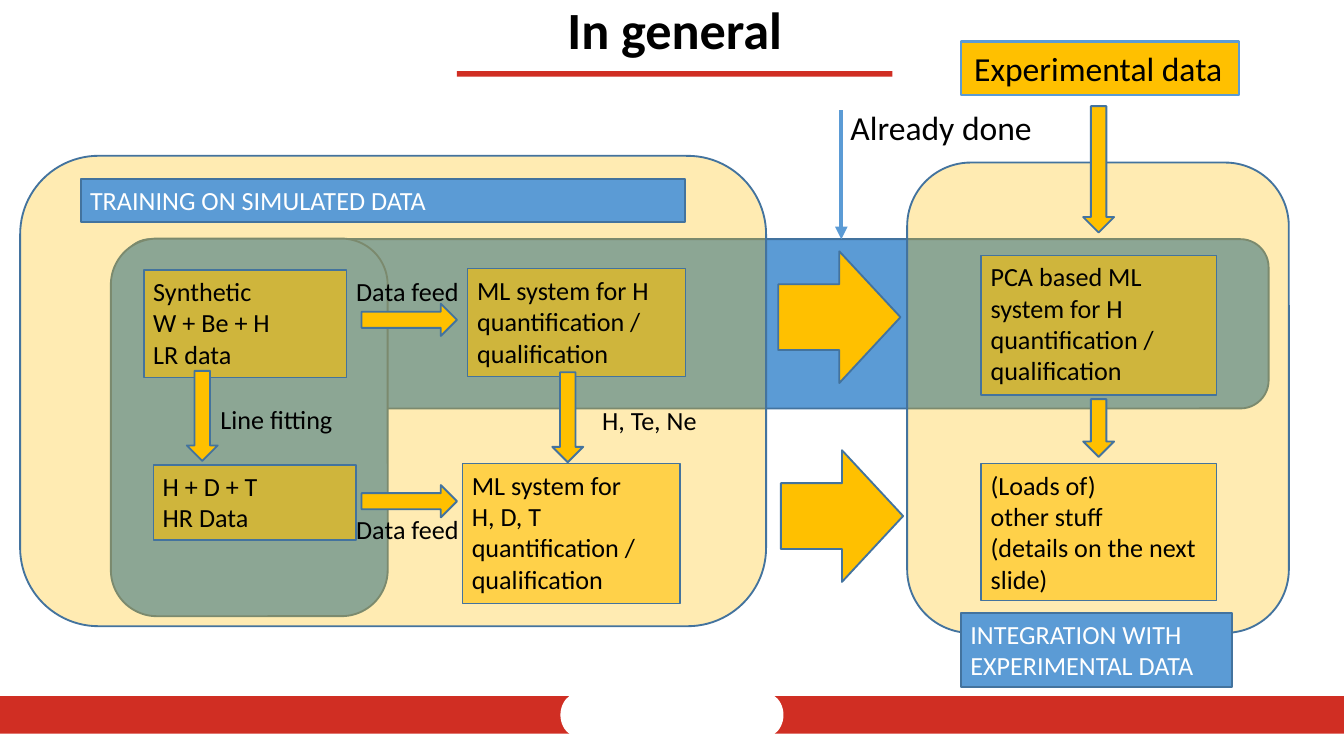
from lxml import etree
from pptx import Presentation
from pptx import util as u
from pptx.dml.color import RGBColor
from pptx.enum import shapes, text
from pptx.oxml import ns

WIDTH = u.Inches(10)
HEIGHT = u.Emu(WIDTH * 9 // 16)
CELL = WIDTH / 100
FONT = "Calibri"
COLOURS = {
    "black": "000000",
    "white": "FFFFFF",
    "red": "D02E23",
    "blue": "5B9BD5",
    "navy": "43739E",
    "gold": "FFC000",
}
KINDS = shapes.MSO_SHAPE


def cells(*counts):
    return [u.Emu(round(count * CELL)) for count in counts]


def rgb(name):
    return RGBColor.from_string(COLOURS[name])


def add_shape(slide, kind, place, fill, line="navy", weight=1, opacity=100):
    shape = slide.shapes.add_shape(kind, *cells(*place))
    shape.shadow.inherit = False
    shape.fill.solid()
    shape.fill.fore_color.rgb = rgb(fill)
    if opacity < 100:
        colour = shape._element.spPr.find(ns.qn("a:solidFill")).find(ns.qn("a:srgbClr"))
        etree.SubElement(colour, ns.qn("a:alpha"), val=str(opacity * 1000))
    if line:
        shape.line.color.rgb = rgb(line)
        shape.line.width = u.Pt(weight)
    else:
        shape.line.fill.background()
    return shape


def write(shape, paragraphs, size=14, colour="black", wrap=True, inset=(0.7, 0.4)):
    frame = shape.text_frame
    frame.word_wrap = wrap
    frame.auto_size = text.MSO_AUTO_SIZE.SHAPE_TO_FIT_TEXT
    frame.vertical_anchor = text.MSO_ANCHOR.TOP
    frame.margin_left, frame.margin_top = cells(*inset)
    frame.margin_right, frame.margin_bottom = cells(*inset)
    for index, content in enumerate(paragraphs):
        paragraph = frame.add_paragraph() if index else frame.paragraphs[0]
        paragraph.alignment = text.PP_ALIGN.LEFT
        for number, line in enumerate(content.split("\n")):
            if number:
                paragraph.add_line_break()
            run = paragraph.add_run()
            run.text = line
            run.font.name = FONT
            run.font.size = u.Pt(size)
            run.font.color.rgb = rgb(colour)


def add_label(slide, place, words, size=14, inset=(0.7, 0.4)):
    box = slide.shapes.add_textbox(*cells(*place))
    write(box, [words], size, wrap=False, inset=inset)
    return box


def add_step(slide, place, *paragraphs):
    step = add_shape(slide, KINDS.RECTANGLE, place, "gold", weight=0.75, opacity=59)
    write(step, paragraphs)


def add_heading(slide, place, words):
    heading = add_shape(slide, KINDS.RECTANGLE, place, "blue")
    write(heading, [words], colour="white")


def add_panel(slide, place):
    add_shape(slide, KINDS.ROUNDED_RECTANGLE, place, "gold", opacity=30)


def add_down_arrow(slide, left, top, height):
    add_shape(slide, KINDS.DOWN_ARROW, (left, top, 2.3, height), "gold")


def add_right_arrow(slide, left, top, width, height):
    add_shape(slide, KINDS.RIGHT_ARROW, (left, top, width, height), "gold")


def add_pointer(slide, column, top, bottom):
    pointer = slide.shapes.add_connector(
        shapes.MSO_CONNECTOR.STRAIGHT, *cells(column, top, column, bottom))
    pointer.line.color.rgb = rgb("blue")
    pointer.line.width = u.Pt(2.25)
    properties = pointer._element.spPr
    etree.SubElement(properties.get_or_add_ln(), ns.qn("a:tailEnd"), type="triangle")
    etree.SubElement(properties, ns.qn("a:effectLst"))


def add_frame(slide):
    add_shape(slide, KINDS.RECTANGLE, (34, 5.3, 32.4, 0.4), "red", None)
    for bar_left, notch_left in ((57.6, 55.3), (0, 41.7)):
        add_shape(slide, KINDS.RECTANGLE, (bar_left, 51.8, 42.4, 2.8), "red", None)
        add_shape(slide, KINDS.OVAL, (notch_left, 51.5, 3, 3.4), "white", None)


def add_title(slide, words):
    title = add_label(slide, (16.8, 0.8, 66.8, 3.3), words, 28)
    frame = title.text_frame
    frame.word_wrap = True
    frame.auto_size = text.MSO_AUTO_SIZE.NONE
    frame.vertical_anchor = text.MSO_ANCHOR.MIDDLE
    paragraph = frame.paragraphs[0]
    paragraph.alignment = text.PP_ALIGN.CENTER
    paragraph.line_spacing = 0.9
    paragraph.runs[0].font.bold = True


def add_training(slide):
    add_panel(slide, (1.5, 11.6, 55.5, 35))
    add_step(slide, (10.7, 20.1, 15.1, 8), "Synthetic\nW + Be + H\nLR data")
    add_step(slide, (34.8, 20, 16.2, 8), "ML system for H quantification / qualification")
    add_step(slide, (11.4, 34.6, 15.1, 5.6), "H + D + T\nHR Data")
    add_step(slide, (34.4, 34.5, 16.2, 10.4),
             "ML system for\nH, D, T quantification / qualification")
    add_label(slide, (44.1, 29.7, 9.8, 3.2), "H, Te, Ne")
    add_label(slide, (15.7, 29.6, 10.7, 3.2), "Line fitting")
    for left, top in ((13.9, 27.6), (41.1, 27.7)):
        add_down_arrow(slide, left, top, 6.7)
    for arrow_top, label_top in ((22.6, 20.1), (36.1, 37.8)):
        add_right_arrow(slide, 26.9, arrow_top, 7.1, 2.4)
        add_label(slide, (25.8, label_top, 10.2, 3.2), "Data feed")
    add_heading(slide, (6, 13.3, 45, 3.2), "TRAINING ON SIMULATED DATA")


def add_integration(slide):
    add_panel(slide, (67.5, 12.1, 28.4, 35))
    add_heading(slide, (71.5, 45.6, 20.2, 5.5), "INTEGRATION WITH EXPERIMENTAL DATA")
    add_step(slide, (73, 19, 17.5, 10.4),
             "PCA based ML system for H quantification / qualification")
    add_step(slide, (73, 34.5, 17.5, 10.2),
             "(Loads of)\nother stuff", "(details on the next slide)")
    source = add_shape(slide, KINDS.RECTANGLE, (71.5, 3.1, 20.7, 4), "gold", "blue", 1.25)
    write(source, ["Experimental data"], 18, wrap=False, inset=(1, 0.5))
    for top, height in ((7.9, 9.4), (29.7, 4.3)):
        add_down_arrow(slide, 80.6, top, height)


def main():
    presentation = Presentation()
    presentation.slide_width, presentation.slide_height = WIDTH, HEIGHT
    slide = presentation.slides.add_slide(presentation.slide_layouts[6])
    add_frame(slide)
    add_title(slide, "In general")
    for place in ((9.1, 17.8, 85.3, 12.6), (8.25, 17.75, 20.6, 28.1)):
        add_shape(slide, KINDS.ROUNDED_RECTANGLE, place, "blue")
    add_training(slide)
    add_integration(slide)
    for left, top in ((57.9, 18.7), (58.1, 33.5)):
        add_right_arrow(slide, left, top, 9.1, 9.8)
    add_pointer(slide, 62.6, 8.2, 17.8)
    add_label(slide, (62.3, 7.5, 15.7, 4), "Already done", 18, (1, 0.5))
    presentation.save("out.pptx")


if __name__ == "__main__":
    main()
